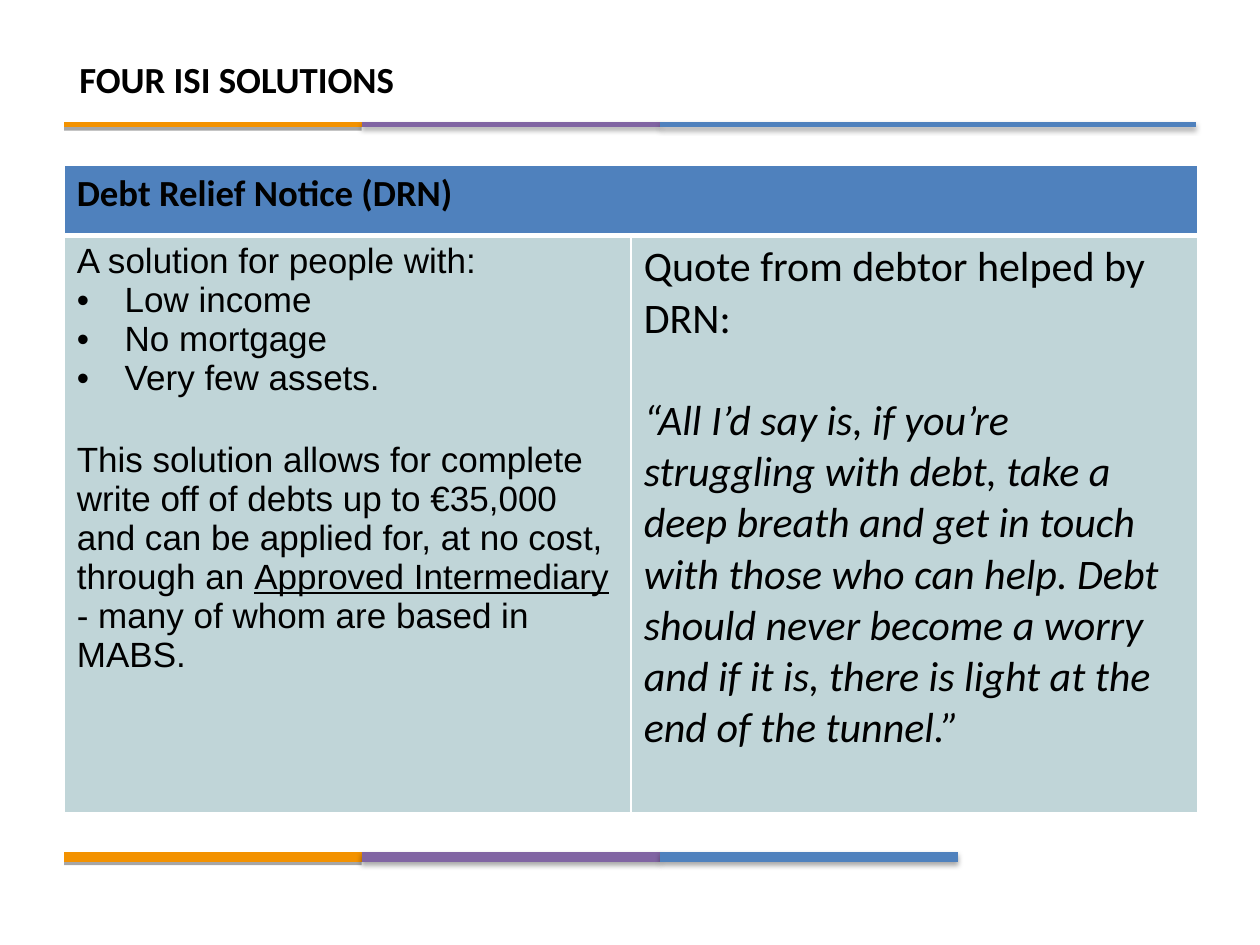
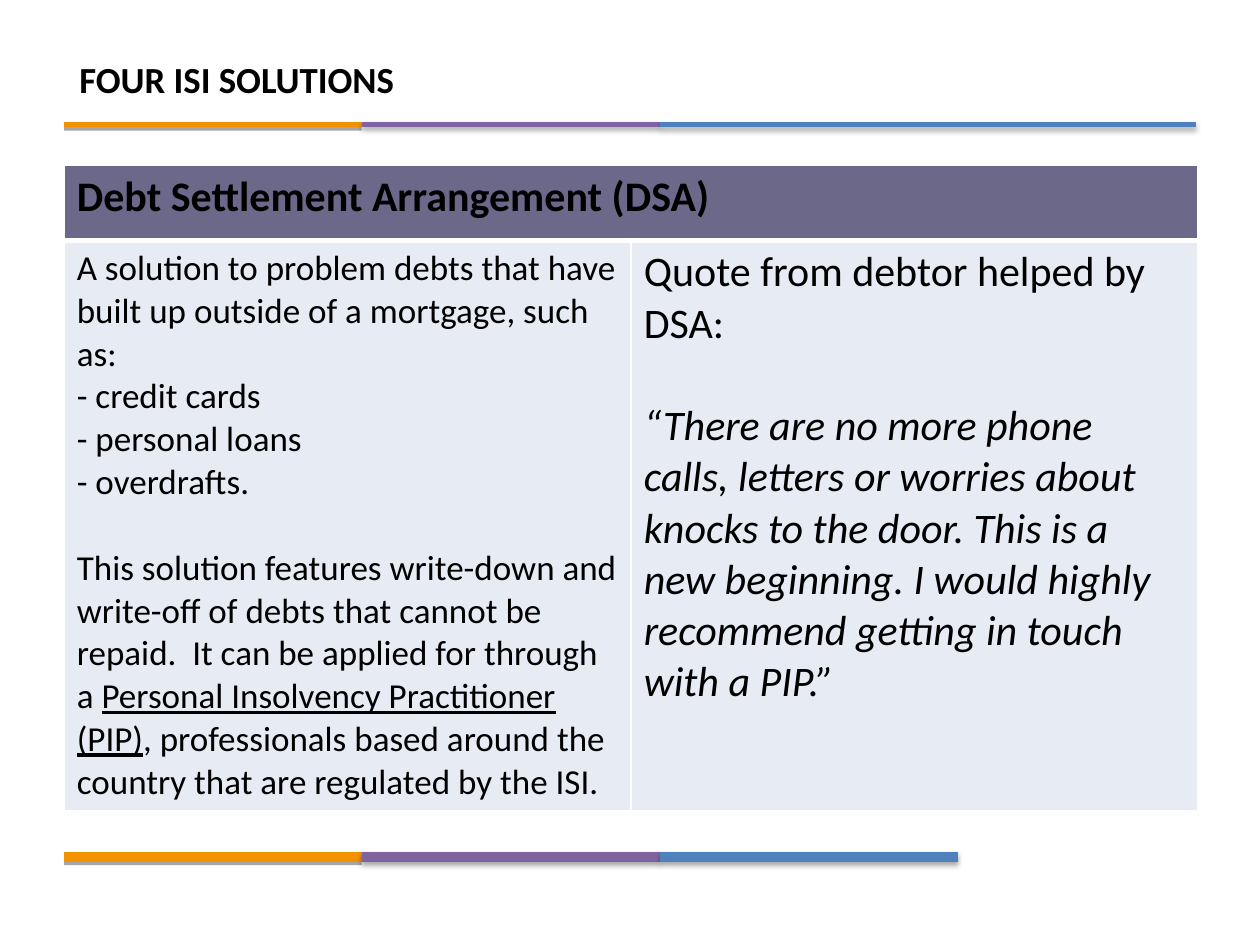
from dataclasses import dataclass
from itertools import pairwise

from lxml import etree
from pptx import Presentation
from pptx.dml.color import RGBColor
from pptx.enum.shapes import MSO_CONNECTOR
from pptx.oxml.ns import qn
from pptx.slide import Slide
from pptx.table import _Cell
from pptx.text.text import _Paragraph
from pptx.util import Inches, Pt

STRAIGHT = MSO_CONNECTOR.STRAIGHT


@dataclass(frozen=True)
class Theme:
    black: str = "000000"
    white: str = "FFFFFF"
    orange: str = "F39200"
    purple: str = "8064A2"
    blue: str = "4F81BD"
    slate: str = "6C6889"
    teal: str = "307680"
    pale_blue: str = "D0D8E8"
    font: str = "Calibri"
    plain_font: str = "Arial"
    title_size: float = 21
    body_size: float = 20
    quote_size: float = 24
    line_height: float = 1.22


THEME = Theme()
LEFT, WIDTH = 0.51, 9.0
TABLE_TOP = 1.31


@dataclass(frozen=True)
class Span:
    text: str
    bold: bool = False
    italic: bool = False
    underline: bool = False


@dataclass(frozen=True)
class Para:
    spans: tuple[Span, ...]
    bullet: bool = False
    gap: bool = False  # leaves one line free above


@dataclass(frozen=True)
class Band:
    """A three-coloured rule across the slide."""
    top: float
    right: float
    weight: float


@dataclass(frozen=True)
class Solution:
    name: str
    name_size: float
    header_color: str
    body_color: str
    body_opacity: int
    row_heights: tuple[float, float]
    details_font: str
    details: tuple[Para, ...]
    quote_intro: str
    quote: str


def line(text: str, bullet: bool = False) -> Para:
    return Para((Span(text),), bullet)


BANDS = (Band(0.99, 9.49, 3), Band(6.8, 7.6, 6))

SOLUTIONS = (
    Solution(
        "Debt Relief Notice (DRN)", THEME.title_size,
        THEME.blue, THEME.teal, 30, (0.56, 4.58), THEME.plain_font,
        (
            line("A solution for people with:"),
            line("Low income", bullet=True),
            line("No mortgage", bullet=True),
            line("Very few assets.", bullet=True),
            Para((
                Span("This solution allows for complete write off of debts up to €35,000 "
                     "and can be applied for, at no cost, through an "),
                Span("Approved Intermediary", underline=True),
                Span(" - many of whom are based in MABS."),
            ), gap=True),
        ),
        "Quote from debtor helped by DRN:",
        "“All I’d say is, if you’re struggling with debt, take a deep breath and get in "
        "touch with those who can help. Debt should never become a worry and if it is, "
        "there is light at the end of the tunnel.”",
    ),
    Solution(
        "Debt Settlement Arrangement (DSA)", THEME.quote_size,
        THEME.slate, THEME.pale_blue, 50, (0.6, 4.52), THEME.font,
        (
            line("A solution to problem debts that have built up outside of a mortgage, such as:"),
            line("- credit cards"),
            line("- personal loans"),
            line("- overdrafts."),
            Para((
                Span("This solution features write-down and write-off of debts that cannot "
                     "be repaid.  It can be applied for through a "),
                Span("Personal Insolvency Practitioner (PIP)", underline=True),
                Span(", professionals based around the country that are regulated by the ISI."),
            ), gap=True),
        ),
        "Quote from debtor helped by DSA:",
        "“There are no more phone calls, letters or worries about knocks to the door. "
        "This is a new beginning. I would highly recommend getting in touch with a PIP.”",
    ),
)


def add_bullet(paragraph: _Paragraph) -> None:
    properties = paragraph._p.get_or_add_pPr()
    indent = Inches(0.38)
    properties.set("marL", str(indent))
    properties.set("indent", str(-indent))
    etree.SubElement(properties, qn("a:buFont"), typeface="Arial")
    etree.SubElement(properties, qn("a:buChar"), char="•")


def write(frame, paras: tuple[Para, ...], font: str, size: float) -> None:
    for index, para in enumerate(paras):
        paragraph = frame.add_paragraph() if index else frame.paragraphs[0]
        if para.bullet:
            add_bullet(paragraph)
        if para.gap:
            paragraph.space_before = Pt(THEME.line_height * size)
        for span in para.spans:
            run = paragraph.add_run()
            run.text = span.text
            run.font.name = font
            run.font.size = Pt(size)
            run.font.bold = span.bold
            run.font.italic = span.italic
            run.font.underline = span.underline
            run.font.color.rgb = RGBColor.from_string(THEME.black)


def add_shadow(connector, blur: float) -> None:
    effects = etree.SubElement(connector._element.spPr, qn("a:effectLst"))
    shadow = etree.SubElement(
        effects, qn("a:outerShdw"), blurRad=str(Pt(blur)), dist=str(Pt(1.8)),
        dir="5400000", rotWithShape="0")
    color = etree.SubElement(shadow, qn("a:srgbClr"), val=THEME.black)
    etree.SubElement(color, qn("a:alpha"), val="35000")


def add_band(slide: Slide, band: Band) -> None:
    stops = (LEFT, 2.87, 5.24, band.right)
    colors = (THEME.orange, THEME.purple, THEME.blue)
    for (start, end), color in zip(pairwise(stops), colors):
        segment = slide.shapes.add_connector(
            STRAIGHT, Inches(start), Inches(band.top), Inches(end), Inches(band.top))
        segment.line.color.rgb = RGBColor.from_string(color)
        segment.line.width = Pt(band.weight)
        add_shadow(segment, 0 if color == THEME.orange else 3.1)


def add_title(slide: Slide, text: str) -> None:
    title = slide.shapes.add_textbox(Inches(LEFT), Inches(0.39), Inches(WIDTH), Inches(0.53))
    frame = title.text_frame
    frame.word_wrap = True
    frame.margin_left = frame.margin_right = Inches(0.12)
    frame.margin_top = frame.margin_bottom = Inches(0.06)
    write(frame, (Para((Span(text, bold=True),)),), THEME.font, THEME.title_size)


def style_cell(cell: _Cell, color: str, opacity: int, top: float, bottom: float) -> None:
    properties = cell._tc.get_or_add_tcPr()
    for side, weight in (("L", 1), ("R", 1), ("T", top), ("B", bottom)):
        border = etree.SubElement(properties, qn(f"a:ln{side}"), w=str(Pt(weight)))
        paint = etree.SubElement(border, qn("a:solidFill"))
        etree.SubElement(paint, qn("a:srgbClr"), val=THEME.white)
    cell.fill.solid()
    cell.fill.fore_color.rgb = RGBColor.from_string(color)
    if opacity < 100:
        fill_color = properties.find(f"{qn('a:solidFill')}/{qn('a:srgbClr')}")
        etree.SubElement(fill_color, qn("a:alpha"), val=str(opacity * 1000))


def add_solution_table(slide: Slide, solution: Solution) -> None:
    table = slide.shapes.add_table(
        2, 2, Inches(LEFT), Inches(TABLE_TOP), Inches(WIDTH),
        Inches(sum(solution.row_heights))).table
    table.horz_banding = False
    for row, height in zip(table.rows, solution.row_heights):
        row.height = Inches(height)
    for column in range(2):
        style_cell(table.cell(0, column), solution.header_color, 100, 1, 3)
        style_cell(table.cell(1, column), solution.body_color, solution.body_opacity, 3, 1)
    header = table.cell(0, 0)
    header.merge(table.cell(0, 1))
    write(header.text_frame, (Para((Span(solution.name, bold=True),)),),
          THEME.font, solution.name_size)
    write(table.cell(1, 0).text_frame, solution.details,
          solution.details_font, THEME.body_size)
    quote = Para((Span(solution.quote, italic=True),), gap=True)
    write(table.cell(1, 1).text_frame, (line(solution.quote_intro), quote),
          THEME.font, THEME.quote_size)


def main() -> None:
    deck = Presentation()
    deck.slide_width, deck.slide_height = Inches(10), Inches(7.5)
    for solution in SOLUTIONS:
        slide = deck.slides.add_slide(deck.slide_layouts[6])
        for band in BANDS:
            add_band(slide, band)
        add_solution_table(slide, solution)
        add_title(slide, "FOUR ISI SOLUTIONS")
    deck.save("out.pptx")


if __name__ == "__main__":
    main()
